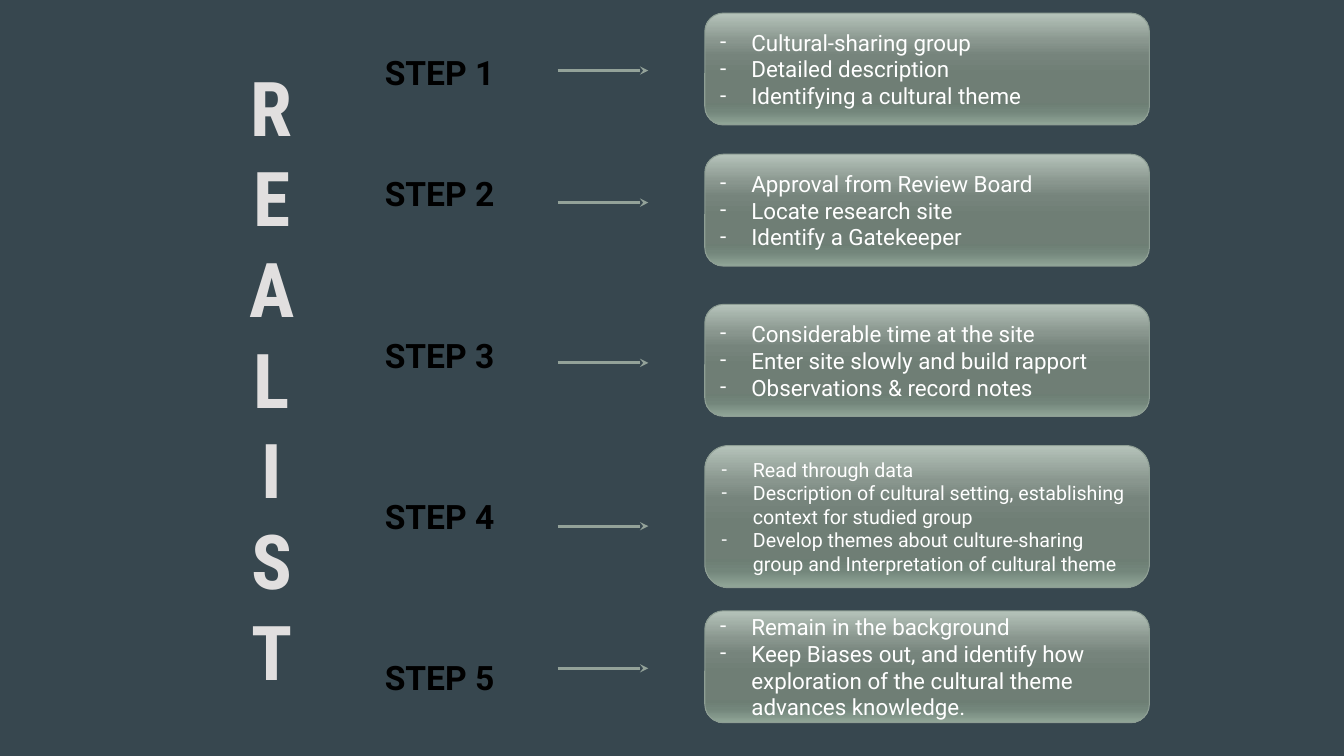
from lxml import etree
from pptx import Presentation
from pptx.dml.color import RGBColor
from pptx.enum import shapes, text
from pptx.oxml import parse_xml
from pptx.oxml.ns import nsdecls, qn
from pptx.util import Inches, Pt

BOX_LEFT, BOX_WIDTH = 6.99, 4.41
ARROW_LEFT, ARROW_RIGHT = 5.53, 6.43
STEP_LINE = 28.8
BULLET_INDENT = Inches(0.31)
GRADIENT = [(0, "B5C3BA"), (25, "89968E"), (38, "76847C"), (55, "6F7E75"),
            (80, "6D7E74"), (88, "73867B"), (100, "91A698")]

# Arrow height, empty lines above the step label, box top, box height, font size, bullets
STEPS = [
    (0.7, 0, 0.13, 1.11, 16, ["Cultural-sharing group",
                              "Detailed description",
                              "Identifying a cultural theme"]),
    (2.01, 2, 1.53, 1.11, 16, ["Approval from Review Board",
                               "Locate research site",
                               "Identify a Gatekeeper"]),
    (3.6, 3, 3.02, 1.11, 16, ["Considerable time at the site",
                              "Enter site slowly and build rapport",
                              "Observations & record notes"]),
    (5.22, 3, 4.42, 1.41, 14, [
        "Read through data",
        "Description of cultural setting, establishing context for studied group",
        "Develop themes about culture-sharing group and Interpretation of cultural theme"]),
    (6.63, 3, 6.06, 1.11, 16, [
        "Remain in the background",
        "Keep Biases out, and identify how exploration of the cultural theme advances knowledge."]),
]


def rgb(color):
    return RGBColor.from_string(color)


def add_styled_run(paragraph, words, color, **font_format):
    run = paragraph.add_run()
    run.text = words
    run.font.color.rgb = rgb(color)
    for name, value in font_format.items():
        setattr(run.font, name, value)


presentation = Presentation()
presentation.slide_width = Inches(13.33)
presentation.slide_height = Inches(7.5)
slide = presentation.slides.add_slide(presentation.slide_layouts[6])
slide.background.fill.solid()
slide.background.fill.fore_color.rgb = rgb("37474F")

# Vertical title
title = slide.shapes.add_textbox(Inches(1.94), Inches(0.01), Inches(1.51), Inches(7.48))
title.text_frame.word_wrap = True
title.text_frame.vertical_anchor = text.MSO_ANCHOR.MIDDLE
paragraph = title.text_frame.paragraphs[0]
paragraph.alignment = text.PP_ALIGN.CENTER
for index, letter in enumerate("REALIST"):
    if index:
        paragraph.add_line_break()
    add_styled_run(paragraph, letter, "E1DFDF", name="Roboto Condensed", size=Pt(54), bold=True)

# Step labels
labels = slide.shapes.add_textbox(Inches(2.72), Inches(0.47), Inches(3.28), Inches(6.56))
labels.text_frame.word_wrap = True

for number, (arrow_y, gap_lines, top, height, size, bullets) in enumerate(STEPS, 1):
    frame = labels.text_frame
    paragraph = frame.paragraphs[0] if number == 1 else frame.add_paragraph()
    paragraph.alignment = text.PP_ALIGN.CENTER
    paragraph.space_before = Pt(gap_lines * STEP_LINE)
    add_styled_run(paragraph, f"STEP {number}", "000000", name="Roboto", size=Pt(24), bold=True)

    arrow = slide.shapes.add_connector(
        shapes.MSO_CONNECTOR.STRAIGHT,
        Inches(ARROW_LEFT), Inches(arrow_y), Inches(ARROW_RIGHT), Inches(arrow_y))
    arrow.line.color.rgb = rgb("93A299")
    arrow.line.width = Pt(2)
    etree.SubElement(arrow.line._get_or_add_ln(), qn("a:tailEnd"), type="stealth")
    etree.SubElement(arrow._element.spPr, qn("a:effectLst"))

    box = slide.shapes.add_shape(
        shapes.MSO_SHAPE.ROUNDED_RECTANGLE,
        Inches(BOX_LEFT), Inches(top), Inches(BOX_WIDTH), Inches(height))
    box.adjustments[0] = 0.167
    box.shadow.inherit = False
    box.line.color.rgb = rgb("8E9E94")
    box.line.width = Pt(0.75)
    stops = "".join(f'<a:gs pos="{position * 1000}"><a:srgbClr val="{color}"/></a:gs>'
                    for position, color in GRADIENT)
    box._element.spPr.find(qn("a:prstGeom")).addnext(parse_xml(
        f'<a:gradFill {nsdecls("a")} rotWithShape="1"><a:gsLst>{stops}</a:gsLst>'
        '<a:lin ang="5400000" scaled="0"/></a:gradFill>'))

    frame = box.text_frame
    frame.word_wrap = True
    frame.vertical_anchor = text.MSO_ANCHOR.MIDDLE
    for index, words in enumerate(bullets):
        paragraph = frame.add_paragraph() if index else frame.paragraphs[0]
        paragraph.alignment = text.PP_ALIGN.LEFT
        add_styled_run(paragraph, words, "FFFFFF", name="Roboto", size=Pt(size))
        properties = paragraph._p.get_or_add_pPr()
        properties.set("marL", str(BULLET_INDENT))
        properties.set("indent", str(-BULLET_INDENT))
        bullet_color = etree.SubElement(properties, qn("a:buClr"))
        etree.SubElement(bullet_color, qn("a:srgbClr"), val="FFFFFF")
        etree.SubElement(properties, qn("a:buFont"), typeface="Roboto")
        etree.SubElement(properties, qn("a:buChar"), char="-")

presentation.save("out.pptx")
